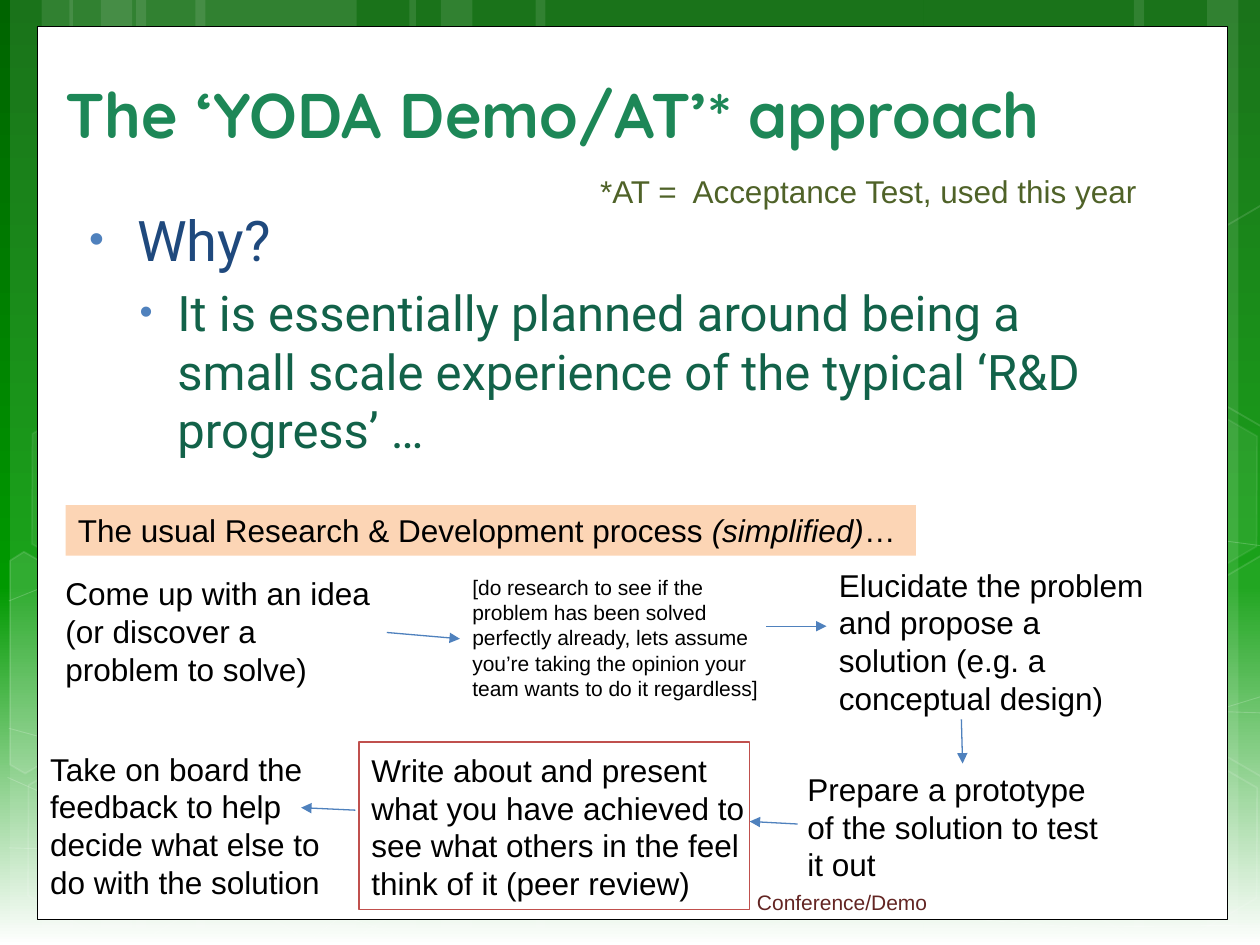
from pptx import Presentation, util as u
from pptx.dml.color import RGBColor
from pptx.enum import shapes as s, text as t
from lxml import etree
from copy import deepcopy

HUE = {
    "white": "FFFFFF", "black": "000000", "dark": "006400", "green": "009900",
    "title": "1D8757", "navy": "1F497D", "teal": "126249", "blue": "4F81BD",
    "peach": "FCD5B5", "red": "C0504D", "wine": "632523", "olive": "4F6228",
}
RGB = {k: RGBColor.from_string(v) for k, v in HUE.items()}

deck = Presentation()
deck.slide_width, deck.slide_height = u.Inches(10), u.Inches(7.5)
# Square grid: 100 columns by 75 rows
G = deck.slide_width // 100
slide = deck.slides.add_slide(deck.slide_layouts[5])
tree = slide.shapes
A = "{http://schemas.openxmlformats.org/drawingml/2006/main}"


def veil(shape, fill, line, width=1):
    """Paint a shape white, with fill and line opacity in percent."""
    shape.shadow.inherit = False
    for part, share in ((shape.fill, fill), (shape.line.fill, line)):
        if share:
            part.solid()
            part.fore_color.rgb = RGB["white"]
        else:
            part.background()
    if line:
        shape.line.width = u.Pt(width)
    for where, share in (("p:spPr", fill), ("p:spPr/a:ln", line)):
        for hue in shape.element.xpath(f"{where}/a:solidFill/a:srgbClr"):
            etree.SubElement(hue, A + "alpha", val=str(share * 1000))


def write(par, words, size, hue, font="Arial", **style):
    """Add one run to a paragraph."""
    run = par.add_run()
    run.text = words
    run.font.size, run.font.name = u.Pt(size), font
    run.font.color.rgb = RGB[hue]
    for name, val in style.items():
        setattr(run.font, name, val)


# Background: green fading to white at the foot
back = slide.background.fill
back.gradient()
back.gradient_angle = 270
stops = slide.element.find(f".//{A}gsLst")
stops.insert(1, deepcopy(stops[0]))
for stop, (pos, hue) in zip(stops, ((0, "dark"), (62, "green"), (100, "white"))):
    stop.set("pos", str(pos * 1000))
    for old in list(stop):
        stop.remove(old)
    etree.SubElement(stop, A + "srgbClr", val=HUE[hue])

# Full-height pale stripes: left column, width
for x, w in ((10.8, 17.5), (0.8, 5), (3.3, 8.3), (15.5, 17.5), (5.5, 5),
             (8, 8.3), (73.3, 17.5), (95.8, 5), (90, 8.3), (42.5, 30.8),
             (32.5, 5), (35, 8.3)):
    bar = tree.add_shape(s.MSO_SHAPE.RECTANGLE, int(x * G), 0,
                         int(w * G), deck.slide_height)
    veil(bar, 10, 0)

# Outlines running off the sides: points, closed, fill, line, width
arcs = (
    [(0.7, 67.3), (19, 67.8), (45.8, 66.5), (79.2, 61.7), (100.7, 55.1)],
    [(0.7, 47.7), (12.1, 43.1), (34.7, 38.7), (65.4, 38.7), (100.7, 43.4)],
    [(0.6, 61.7), (18, 69.4), (33.4, 74.9)],
    [(0.7, 57.8), (35.7, 67.3), (62.8, 71.8), (85.3, 73.6), (100.7, 73.4)],
    [(24.2, 74.9), (38.8, 63.9), (60.8, 57.8), (88.6, 56.2), (100.6, 56.6)],
)
cuts = (
    ([(0.8, 44.5), (1.9, 43.8), (9.6, 48.2), (9.5, 57), (2, 61.4), (0.8, 60.7)], 10),
    ([(92.6, 48.5), (100.1, 44.1), (100.9, 44.6), (100.9, 61.3), (100.2, 61.7),
      (92.6, 57.3)], 4),
    ([(92.6, 20.7), (100.1, 16.3), (101, 16.8), (100.9, 33.5), (100.2, 33.9),
      (92.6, 29.5)], 0),
)
lines = [(a, False, 0, 20, 0.5) for a in arcs] + [(c, True, f, 12, 1) for c, f in cuts]
for pts, shut, fill, line, width in lines:
    pts = [(round(x * 10), round(y * 10)) for x, y in pts]
    pen = tree.build_freeform(*pts[0], scale=G / 10)
    pen.add_line_segments(pts[1:], close=shut)
    veil(pen.convert_to_shape(), fill, line, width)

# Hexagons that show past the panel: column, row, fill, line
for x, y, fill, line in ((49.7, 58.9, 6, 12), (1.1, 59.1, 0, 12), (1.4, 31.2, 7, 8),
                         (17.4, 59.2, 0, 12), (83.4, 59.3, 0, 12), (83.4, 31.4, 7, 8)):
    cell = tree.add_shape(s.MSO_SHAPE.HEXAGON, int(x * G), int(y * G),
                          int(17.5 * G), int(15.2 * G))
    cell.adjustments[0] = 0.285
    cell.rotation = 30
    veil(cell, fill, line)

# White panel, peach banner and red frame: place, fill, line, width
frames = []
for x, y, w, h, fill, line, width in (
        (3, 2.1, 94.4, 70.9, "white", "black", 0.5),
        (5.2, 40.1, 67.5, 4, "peach", None, 0),
        (28.5, 58.9, 31, 13.3, None, "red", 1)):
    box = tree.add_shape(s.MSO_SHAPE.RECTANGLE, *(int(v * G) for v in (x, y, w, h)))
    box.shadow.inherit = False
    for part, hue in ((box.fill, fill), (box.line.fill, line)):
        if hue:
            part.solid()
            part.fore_color.rgb = RGB[hue]
        else:
            part.background()
    if line:
        box.line.width = u.Pt(width)
    frames.append(box)

# Banner text
tf = frames[1].text_frame
tf.word_wrap = False
par = tf.paragraphs[0]
par.alignment = t.PP_ALIGN.LEFT
write(par, "The usual Research & Development process ", 18, "black")
write(par, "(simplified)", 18, "black", italic=True)
write(par, "…", 18, "black")

# Title, brought in front of the panel
head = tree.title
tree.element.append(head.element) if hasattr(tree, "element") else head.element.getparent().append(head.element)
head.left, head.top, head.width, head.height = (int(v * G) for v in (4.2, 4.9, 88, 7.6))
head.text_frame.vertical_anchor = t.MSO_ANCHOR.BOTTOM
par = head.text_frame.paragraphs[0]
par.alignment = t.PP_ALIGN.LEFT
write(par, "The ‘YODA Demo/AT’* approach", 36, "title", "Quicksand", bold=True)

# Bulleted reasons: words, level, size, colour, margin, hang
body = tree.add_textbox(*(int(v * G) for v in (6.1, 15.8, 84.2, 49.4)))
tf = body.text_frame
tf.word_wrap = True
for words, rank, size, hue, left, hang in (
        ("Why?", 0, 32, "navy", 3.8, 4),
        ("It is essentially planned around being a small scale experience "
         "of the typical ‘R&D progress’ …", 1, 28, "teal", 7, 3)):
    par = tf.add_paragraph() if rank else tf.paragraphs[0]
    par.level = rank
    par.space_before = u.Pt(size * 0.2)
    write(par, words, size, hue, "Roboto")
    prop = par._p.get_or_add_pPr()
    prop.set("marL", str(int(left * G)))
    prop.set("indent", str(int(-hang * G)))
    tint = etree.SubElement(prop, A + "buClr")
    etree.SubElement(tint, A + "srgbClr", val=HUE["blue"])
    etree.SubElement(prop, A + "buSzPct", val="76000")
    etree.SubElement(prop, A + "buFont", typeface="Arial")
    etree.SubElement(prop, A + "buChar", char="•")

# Process steps and notes: place, size, colour, wrap, words
for x, y, w, h, size, hue, wrap, words in (
        (4.2, 45.1, 26.5, 10.1, 18, "black", True,
         "Come up with an idea (or discover a problem to solve)"),
        (36.5, 45.1, 26.5, 11.1, 12, "black", True,
         "[do research to see if the problem has been solved perfectly already, lets "
         "assume you’re taking the opinion your team wants to do it regardless]"),
        (65.6, 44.4, 26.5, 13.1, 18, "black", True,
         "Elucidate the problem and propose a solution (e.g. a conceptual design)"),
        (63.1, 60.6, 26.5, 10.1, 18, "black", True,
         "Prepare a prototype of the solution to test it out"),
        (28.5, 59.1, 32.7, 13.1, 18, "black", True,
         "Write about and present what you have achieved to see what others "
         "in the feel think of it (peer review)"),
        (3, 59, 24.2, 13.1, 18, "black", True,
         "Take on board the feedback to help decide what else to do with the solution"),
        (59.1, 70.1, 15.6, 3, 12, "wine", False, "Conference/Demo"),
        (40.7, 13.2, 50.5, 4, 18, "olive", True,
         "*AT =  Acceptance Test, used this year")):
    box = tree.add_textbox(*(int(v * G) for v in (x, y, w, h)))
    box.text_frame.word_wrap = wrap
    par = box.text_frame.paragraphs[0]
    par.alignment = t.PP_ALIGN.RIGHT if hue == "olive" else t.PP_ALIGN.LEFT
    write(par, words, size, hue)

# Arrows from step to step
for ends in ((30.7, 50.2, 36.5, 50.7), (60.8, 49.7, 65.6, 49.7), (76.3, 57.1, 76.4, 60.6),
             (63.3, 65.4, 59.5, 65.2), (28.2, 64.3, 23.9, 64.1)):
    link = tree.add_connector(s.MSO_CONNECTOR.STRAIGHT, *(int(v * G) for v in ends))
    link.line.color.rgb = RGB["blue"]
    link.line.width = u.Pt(0.75)
    etree.SubElement(link.element.find(f".//{A}ln"), A + "tailEnd", type="triangle")
    etree.SubElement(link.element.spPr, A + "effectLst")

deck.save("out.pptx")
